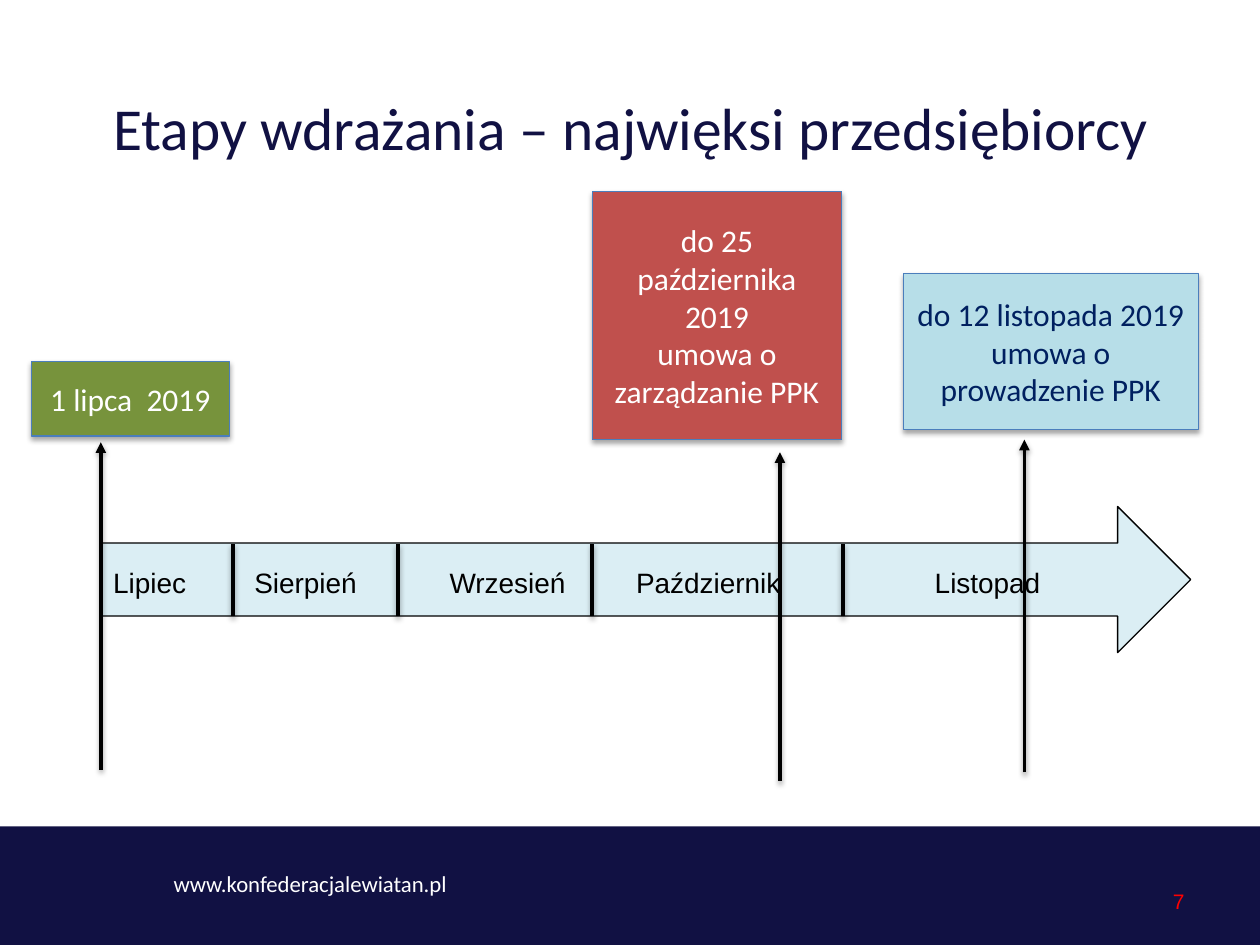
from lxml.etree import SubElement
from pptx import Presentation
from pptx.dml.color import RGBColor
from pptx.enum.shapes import MSO_CONNECTOR, MSO_SHAPE
from pptx.enum.text import MSO_ANCHOR, PP_ALIGN
from pptx.oxml.ns import qn
from pptx.util import Inches, Pt

TITLE = "Etapy wdrażania – najwięksi przedsiębiorcy"
SITE = "www.konfederacjalewiatan.pl"
NUMBER = "7"
NAVY, BLACK, WHITE = "111143", "000000", "FFFFFF"

# name, left edge of the label
MONTHS = [("Lipiec", 0.9), ("Sierpień", 2.02), ("Wrzesień", 3.57),
          ("Październik", 5.05), ("Listopad", 7.42)]
BORDERS = [1.85, 3.16, 4.7, 6.69]
BAND = (4.32, 4.89)

# lines, box, fill, text colour, pointer (x, bottom, top)
STAGES = [
    (["1 lipca  2019"], (0.25, 2.87, 1.57, 0.59), "77933C", WHITE,
     (0.8, 6.11, 3.51)),
    (["do 25 października 2019", "umowa o zarządzanie PPK"],
     (4.7, 1.52, 1.98, 1.97), "C0504D", WHITE, (6.19, 6.2, 3.59)),
    (["do 12 listopada 2019", "umowa o prowadzenie PPK"],
     (7.17, 2.17, 2.34, 1.24), "B7DEE8", "002060", (8.13, 6.13, 3.49)),
]


def color(code):
    return RGBColor.from_string(code)


def inches(*sizes):
    return [Inches(size) for size in sizes]


def add_tabs(para, stops):
    tabs = SubElement(para._p.get_or_add_pPr(), qn("a:tabLst"))
    for stop in stops:
        SubElement(tabs, qn("a:tab"), pos=str(Inches(stop)), algn="l")


def write(shape, lines, hue, size, font="Calibri", align=PP_ALIGN.LEFT,
          anchor=MSO_ANCHOR.TOP, stops=()):
    frame = shape.text_frame
    frame.word_wrap = True
    frame.vertical_anchor = anchor
    frame.text = "\n".join(lines)
    for para in frame.paragraphs:
        para.alignment = align
        if stops:
            add_tabs(para, stops)
        for key, value in {"name": font, "size": Pt(size)}.items():
            setattr(para.font, key, value)
        para.font.color.rgb = color(hue)
    return frame


def add_shadow(props, alpha, dist):
    effects = props.find(qn("a:effectLst"))
    if effects is None:
        effects = SubElement(props, qn("a:effectLst"))
    outer = SubElement(effects, qn("a:outerShdw"), blurRad=str(Pt(3.1)),
                       dist=str(Pt(dist)), dir="5400000", rotWithShape="0")
    tint = SubElement(outer, qn("a:srgbClr"), val=BLACK)
    SubElement(tint, qn("a:alpha"), val=str(alpha * 1000))


def add_block(slide, kind, box, fill, edge=None):
    shape = slide.shapes.add_shape(kind, *inches(*box))
    shape.shadow.inherit = False
    shape.fill.solid()
    shape.fill.fore_color.rgb = color(fill)
    if edge:
        shape.line.color.rgb = color(edge)
        shape.line.width = Pt(0.75)
    else:
        shape.line.fill.background()
    return shape


def add_line(slide, x, start, end, arrow=False):
    line = slide.shapes.add_connector(MSO_CONNECTOR.STRAIGHT,
                                      *inches(x, start, x, end))
    line.line.color.rgb = color(BLACK)
    line.line.width = Pt(2)
    props = line._element.spPr
    if arrow:
        SubElement(props.find(qn("a:ln")), qn("a:tailEnd"), type="triangle")
    add_shadow(props, 38, 1.6)


def add_months(slide):
    """Draw the timeline arrow, with one tab stop per month."""
    arrow = add_block(slide, MSO_SHAPE.RIGHT_ARROW, (0.8, 4.02, 8.65, 1.16),
                      "DBEEF4", BLACK)
    names, lefts = zip(*MONTHS)
    stops = [left - lefts[0] for left in lefts[1:]]
    frame = write(arrow, ["\t".join(names)], BLACK, 16, "Arial", stops=stops)
    frame.paragraphs[0].line_spacing = 1.5


def main():
    deck = Presentation()
    deck.slide_width, deck.slide_height = inches(10, 7.5)
    slide = deck.slides.add_slide(deck.slide_layouts[5])

    add_block(slide, MSO_SHAPE.RECTANGLE, (0, 6.56, 10, 0.94), NAVY)
    site = slide.shapes.add_textbox(*inches(1.28, 6.85, 3.31, 0.54))
    write(site, [SITE], WHITE, 13)
    number = slide.shapes.add_textbox(*inches(7.17, 6.95, 2.33, 0.4))
    write(number, [NUMBER], "FF0000", 12, "Arial", PP_ALIGN.RIGHT,
          MSO_ANCHOR.MIDDLE)

    title = slide.shapes.title
    place = zip(("left", "top", "width", "height"),
                inches(0.8, 0.67, 8.65, 0.86))
    for key, value in place:
        setattr(title, key, value)
    write(title, [TITLE], NAVY, 34)

    add_months(slide)
    for x in BORDERS:
        add_line(slide, x, *BAND)
    for lines, box, fill, hue, pointer in STAGES:
        add_line(slide, *pointer, arrow=True)
        card = add_block(slide, MSO_SHAPE.FLOWCHART_PROCESS, box, fill,
                         "4B7EBC")
        add_shadow(card._element.spPr, 35, 1.8)
        write(card, lines, hue, 18, align=PP_ALIGN.CENTER,
              anchor=MSO_ANCHOR.MIDDLE)
    deck.save("out.pptx")


if __name__ == "__main__":
    main()
